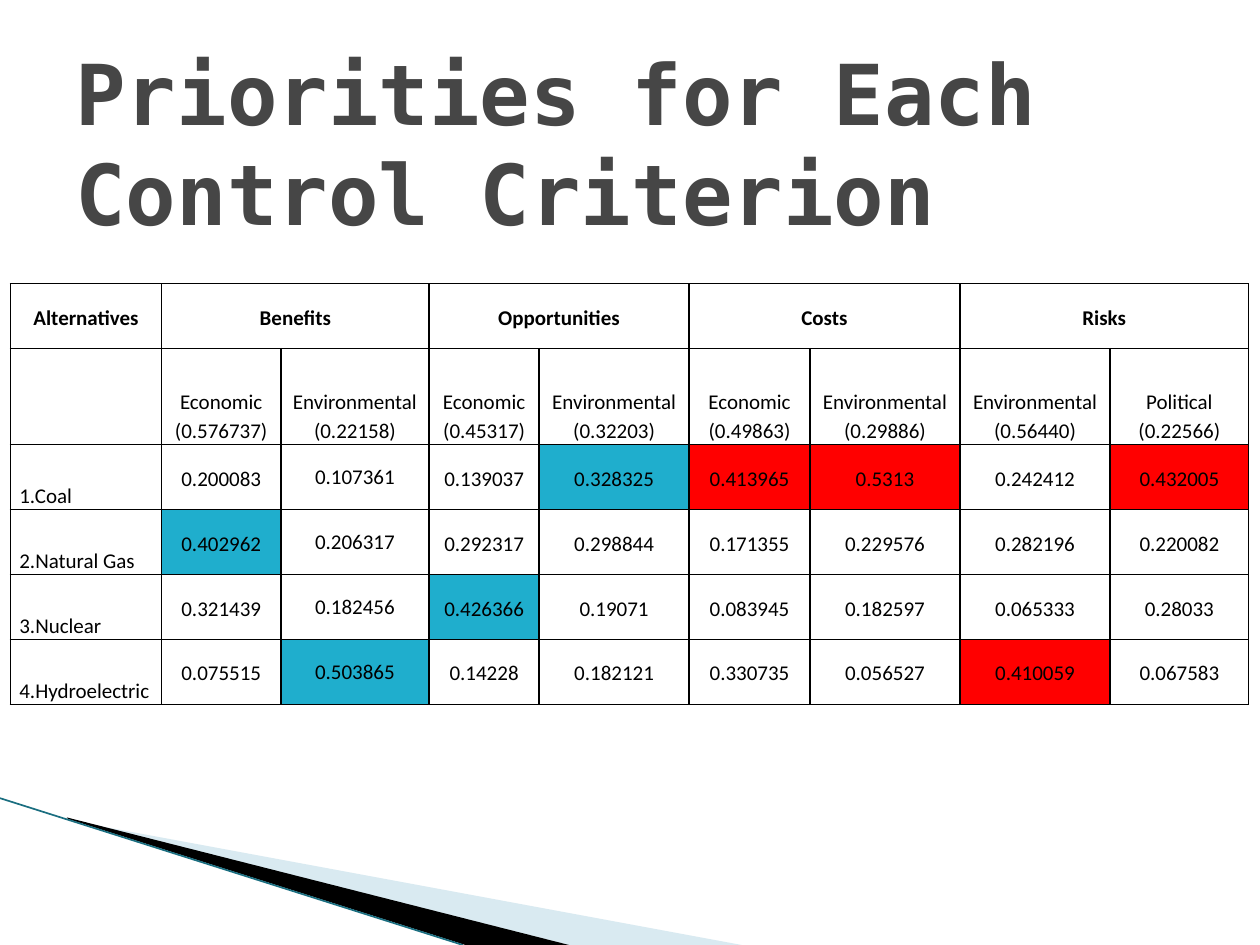
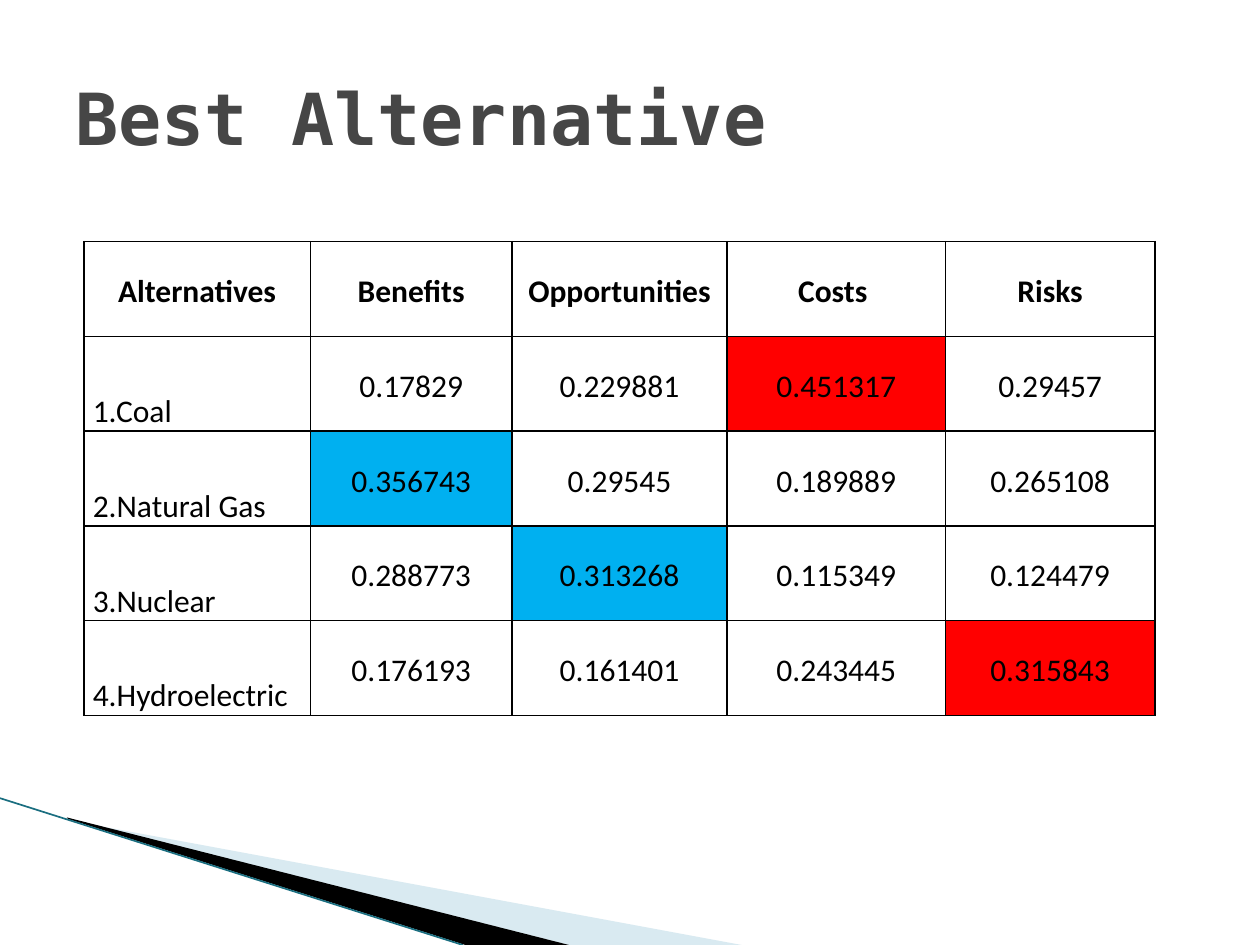
from lxml import etree
from pptx import Presentation
from pptx.dml.color import RGBColor
from pptx.enum.shapes import MSO_CONNECTOR
from pptx.enum.text import MSO_ANCHOR, PP_ALIGN
from pptx.oxml.ns import qn
from pptx.util import Cm, Pt

STRAIGHT = MSO_CONNECTOR.STRAIGHT
MIDDLE, BOTTOM = MSO_ANCHOR.MIDDLE, MSO_ANCHOR.BOTTOM
LEFT, CENTER = PP_ALIGN.LEFT, PP_ALIGN.CENTER

COLORS = {
    "title": "464646",
    "text": "000000",
    "border": "000000",
    "wedge_light": "A0CBDC",
    "wedge_dark": "000000",
    "edge": "1A6E80",
    "teal": "1FAECD",
    "blue": "00B0F0",
    "red": "FF0000",
}
TITLE_FONT = "DejaVu Sans Mono"
TABLE_FONT = "Calibri"

GROUPS = ["Benefits", "Opportunities", "Costs", "Risks"]
PRIORITIES = [
    ["Alternatives"] + [text for group in GROUPS for text in (group, "")],
    ["", "Economic\n(0.576737)", "Environmental\n(0.22158)",
     "Economic\n(0.45317)", "Environmental\n(0.32203)",
     "Economic\n(0.49863)", "Environmental\n(0.29886)",
     "Environmental\n(0.56440)", "Political\n(0.22566)"],
    ["1.Coal", "0.200083", "0.107361", "0.139037", "0.328325",
     "0.413965", "0.5313", "0.242412", "0.432005"],
    ["2.Natural Gas", "0.402962", "0.206317", "0.292317", "0.298844",
     "0.171355", "0.229576", "0.282196", "0.220082"],
    ["3.Nuclear", "0.321439", "0.182456", "0.426366", "0.19071",
     "0.083945", "0.182597", "0.065333", "0.28033"],
    ["4.Hydroelectric", "0.075515", "0.503865", "0.14228", "0.182121",
     "0.330735", "0.056527", "0.410059", "0.067583"],
]
PRIORITY_FILLS = {
    (2, 4): "teal", (3, 1): "teal", (4, 3): "teal", (5, 2): "teal",
    (2, 5): "red", (2, 6): "red", (2, 8): "red", (5, 7): "red",
}
BEST = [
    ["Alternatives", "Benefits", "Opportunities", "Costs ", "Risks"],
    ["1.Coal", "0.17829", "0.229881", "0.451317", "0.29457"],
    ["2.Natural Gas", "0.356743", "0.29545", "0.189889", "0.265108"],
    ["3.Nuclear", "0.288773", "0.313268", "0.115349", "0.124479"],
    ["4.Hydroelectric", "0.176193", "0.161401", "0.243445", "0.315843"],
]
BEST_FILLS = {(1, 3): "red", (2, 1): "blue", (3, 2): "blue", (4, 4): "red"}


def rgb(name):
    return RGBColor.from_string(COLORS[name])


class Deck:
    def __init__(self):
        self.presentation = Presentation()
        self.presentation.slide_width = Cm(25.4)
        self.presentation.slide_height = Cm(19.05)
        self.slide = None

    def add_slide(self):
        layout = self.presentation.slide_layouts[6]
        self.slide = self.presentation.slides.add_slide(layout)
        self.wedge([(1.4, 16.54), (14.95, 19.05), (11.47, 19.05), (1.4, 16.51)],
                   "wedge_light", 40)
        self.wedge([(1.35, 16.48), (11.47, 19.05), (9.38, 19.05), (1.37, 16.51)],
                   "wedge_dark")
        self.line((0, 16.09), (9.33, 19.05), "edge", 0.95)

    def wedge(self, points, color, opacity=100):
        start, *rest = [(Cm(x), Cm(y)) for x, y in points]
        builder = self.slide.shapes.build_freeform(*start)
        builder.add_line_segments(rest)
        shape = builder.convert_to_shape()
        shape.shadow.inherit = False
        shape.fill.solid()
        shape.fill.fore_color.rgb = rgb(color)
        shape.line.fill.background()
        if opacity < 100:
            fill = shape.fill._xPr.find(qn("a:solidFill"))
            etree.SubElement(fill[0], qn("a:alpha"), val=str(opacity * 1000))

    def line(self, start, end, color, width):
        connector = self.slide.shapes.add_connector(
            STRAIGHT, *(Cm(value) for value in start + end))
        connector.line.color.rgb = rgb(color)
        connector.line.width = Pt(width)
        etree.SubElement(connector._element.spPr, qn("a:effectLst"))

    def run(self, paragraph, text, font, size, color, bold):
        run = paragraph.add_run()
        run.text = text
        run.font.name = font
        run.font.size = Pt(size)
        run.font.bold = bold
        run.font.color.rgb = rgb(color)

    def title(self, lines, top, size):
        box = self.slide.shapes.add_textbox(Cm(1.27), Cm(top), Cm(22.86), Cm(3.18))
        frame = box.text_frame
        frame.word_wrap = True
        frame.vertical_anchor = MIDDLE
        paragraph = frame.paragraphs[0]
        for index, text in enumerate(lines):
            if index:
                paragraph.add_line_break()
            self.run(paragraph, text, TITLE_FONT, size, "title", True)

    def borders(self, cell):
        properties = cell._tc.get_or_add_tcPr()
        for side in ("lnL", "lnR", "lnT", "lnB"):
            line = etree.SubElement(properties, qn(f"a:{side}"), w=str(Pt(1)))
            fill = etree.SubElement(line, qn("a:solidFill"))
            etree.SubElement(fill, qn("a:srgbClr"), val=COLORS["border"])

    def cell(self, cell, text, size, header, label, fill, tight):
        self.borders(cell)
        if fill:
            cell.fill.solid()
            cell.fill.fore_color.rgb = rgb(fill)
        else:
            cell.fill.background()
        cell.margin_left = cell.margin_right = Cm(0.02 if tight else 0.18)
        cell.margin_top = Cm(0.02 if tight else 0)
        cell.margin_bottom = Cm(0)
        cell.vertical_anchor = BOTTOM if label or "\n" in text else MIDDLE
        if not text:
            return
        frame = cell.text_frame
        for index, part in enumerate(text.split("\n")):
            paragraph = frame.add_paragraph() if index else frame.paragraphs[0]
            paragraph.alignment = LEFT if label else CENTER
            paragraph.line_spacing = 1.0 if tight else 1.15
            self.run(paragraph, part, TABLE_FONT, size, "text", header)

    def table(self, left, top, widths, heights, rows, size, fills,
              merges=(), tight_cells=()):
        table = self.slide.shapes.add_table(
            len(rows), len(widths), Cm(left), Cm(top),
            Cm(sum(widths)), Cm(sum(heights))).table
        table.first_row = table.horz_banding = False
        for column, width in zip(table.columns, widths):
            column.width = Cm(width)
        for row, height in zip(table.rows, heights):
            row.height = Cm(height)
        for i, texts in enumerate(rows):
            for j, text in enumerate(texts):
                self.cell(table.cell(i, j), text, size, header=i == 0,
                          label=i > 0 and j == 0, fill=fills.get((i, j)),
                          tight=(i, j) in tight_cells)
        for first in merges:
            table.cell(0, first).merge(table.cell(0, first + 1))


def main():
    deck = Deck()

    deck.add_slide()
    deck.title(["Priorities for Each ", "Control Criterion"], 1.27, 48)
    deck.table(0.21, 5.72,
               [3.05, 2.4, 2.99, 2.22, 3.02, 2.44, 3.02, 3.03, 2.79],
               [1.31, 1.93] + [1.31] * 4, PRIORITIES, 12, PRIORITY_FILLS,
               merges=range(1, 9, 2), tight_cells=[(row, 2) for row in range(2, 6)])

    deck.add_slide()
    deck.title(["Best Alternative"], 0.76, 41)
    deck.table(1.69, 4.87, [4.57, 4.06, 4.34, 4.4, 4.22], [1.91] * 5,
               BEST, 18, BEST_FILLS)

    deck.presentation.save("out.pptx")


if __name__ == "__main__":
    main()
